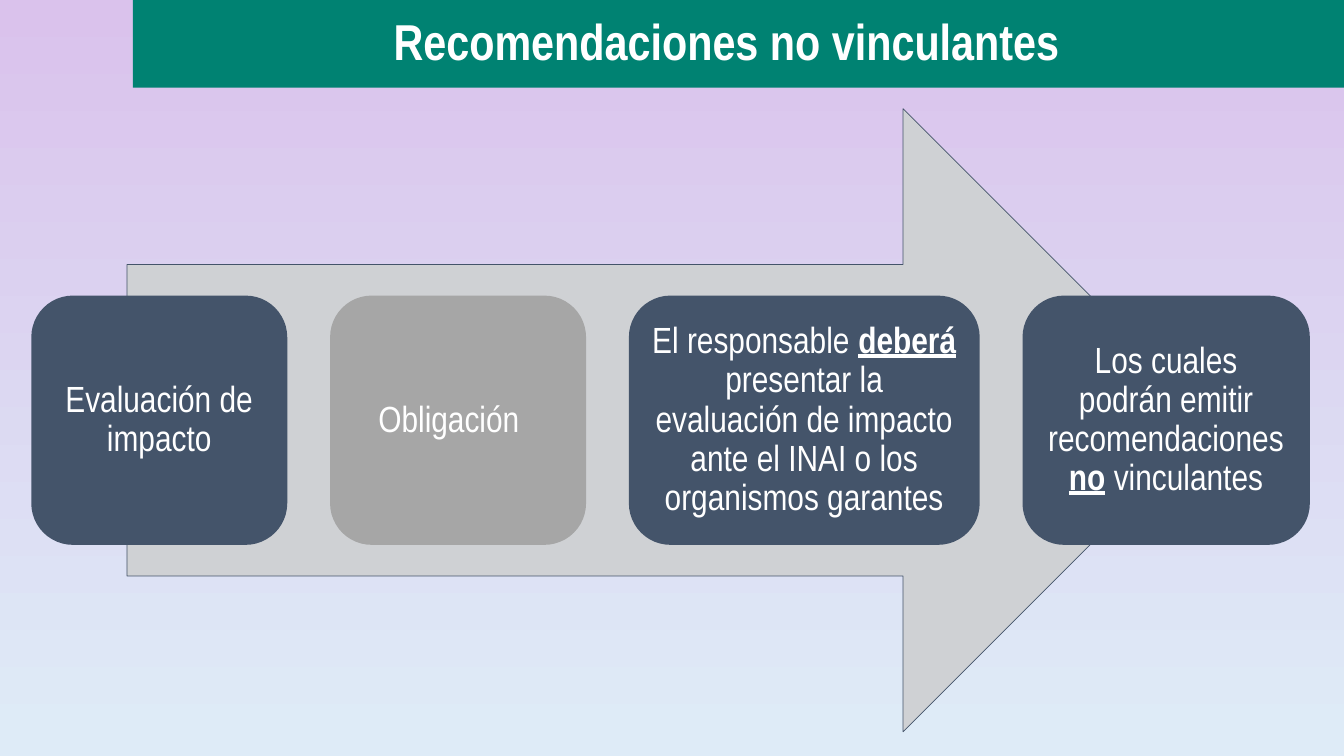
from pptx import Presentation
from pptx.dml.color import RGBColor
from pptx.enum.shapes import MSO_SHAPE as Kind
from pptx.enum.text import MSO_ANCHOR as Anchor, PP_ALIGN as Align
from pptx.util import Cm, Pt

LILAC = RGBColor(0xDA, 0xC2, 0xEC)
SKY = RGBColor(0xDE, 0xEB, 0xF7)
GREEN = RGBColor(0x00, 0x82, 0x72)
SILVER = RGBColor(0xCF, 0xD1, 0xD4)
SLATE = RGBColor(0x44, 0x54, 0x6A)
GRAY = RGBColor(0xA6, 0xA6, 0xA6)
WHITE = RGBColor(0xFF, 0xFF, 0xFF)

LEFT, TOP, HIGH, GAP = 0.79, 7.45, 6.28, 1.08

# Width, fill, extra right inset, and text pieces; every second piece is stressed
STEPS = [
    (6.45, SLATE, 0, ["Evaluación de impacto"]),
    (6.45, GRAY, 0.46, ["Obligación"]),
    (8.84, SLATE, 0, ["El responsable ", "deberá",
                      " presentar la evaluación de impacto ante el INAI "
                      "o los organismos garantes"]),
    (7.24, SLATE, 0, ["Los cuales podrán emitir recomendaciones ", "no",
                      " vinculantes"]),
]


class Deck:
    font = "Arial Narrow"
    inset = 0.25

    def __init__(self):
        self.prs = Presentation()
        self.prs.slide_width, self.prs.slide_height = Cm(33.87), Cm(19.05)
        self.slide = self.prs.slides.add_slide(self.prs.slide_layouts[6])

    def backdrop(self, top, base):
        fill = self.slide.background.fill
        fill.gradient()
        fill.gradient_angle = 270
        for stop, tone, place in zip(fill.gradient_stops, (top, base), (0, 0.98)):
            stop.color.rgb = tone
            stop.position = place

    def shape(self, kind, x, y, w, h, fill, line=None):
        shape = self.slide.shapes.add_shape(kind, Cm(x), Cm(y), Cm(w), Cm(h))
        shape.shadow.inherit = False
        shape.fill.solid()
        shape.fill.fore_color.rgb = fill
        if line is None:
            shape.line.fill.background()
        else:
            shape.line.color.rgb = line
            shape.line.width = Pt(0.5)
        return shape

    def label(self, shape, parts, size, bold=False, extra=0):
        """Centre the parts in the shape, with the odd ones bold and underlined."""
        frame = shape.text_frame
        frame.word_wrap = True
        frame.vertical_anchor = Anchor.MIDDLE
        frame.margin_left = frame.margin_top = frame.margin_bottom = Cm(self.inset)
        frame.margin_right = Cm(self.inset + extra)
        para = frame.paragraphs[0]
        para.alignment = Align.CENTER
        para.line_spacing = 0.9
        for i, part in enumerate(parts):
            run = para.add_run()
            run.text = part
            stress = i % 2 == 1
            font = run.font
            font.name, font.size = self.font, Pt(size)
            font.color.rgb = WHITE
            font.bold = bold or stress
            font.underline = stress

    def title(self, text):
        bar = self.shape(Kind.RECTANGLE, 3.35, 0, 30.52, 2.21, GREEN)
        self.label(bar, [text], 36, bold=True, extra=0.6)

    def steps(self, rows):
        x = LEFT
        for wide, fill, extra, parts in rows:
            box = self.shape(Kind.ROUNDED_RECTANGLE, x, TOP, wide, HIGH, fill)
            self.label(box, parts, 26, extra=extra)
            x += wide + GAP


def main():
    deck = Deck()
    deck.backdrop(LILAC, SKY)
    deck.title("Recomendaciones no vinculantes")
    deck.shape(Kind.RIGHT_ARROW, 3.2, 2.74, 27.41, 15.7, SILVER, SLATE)
    deck.steps(STEPS)
    deck.prs.save("out.pptx")


if __name__ == "__main__":
    main()
